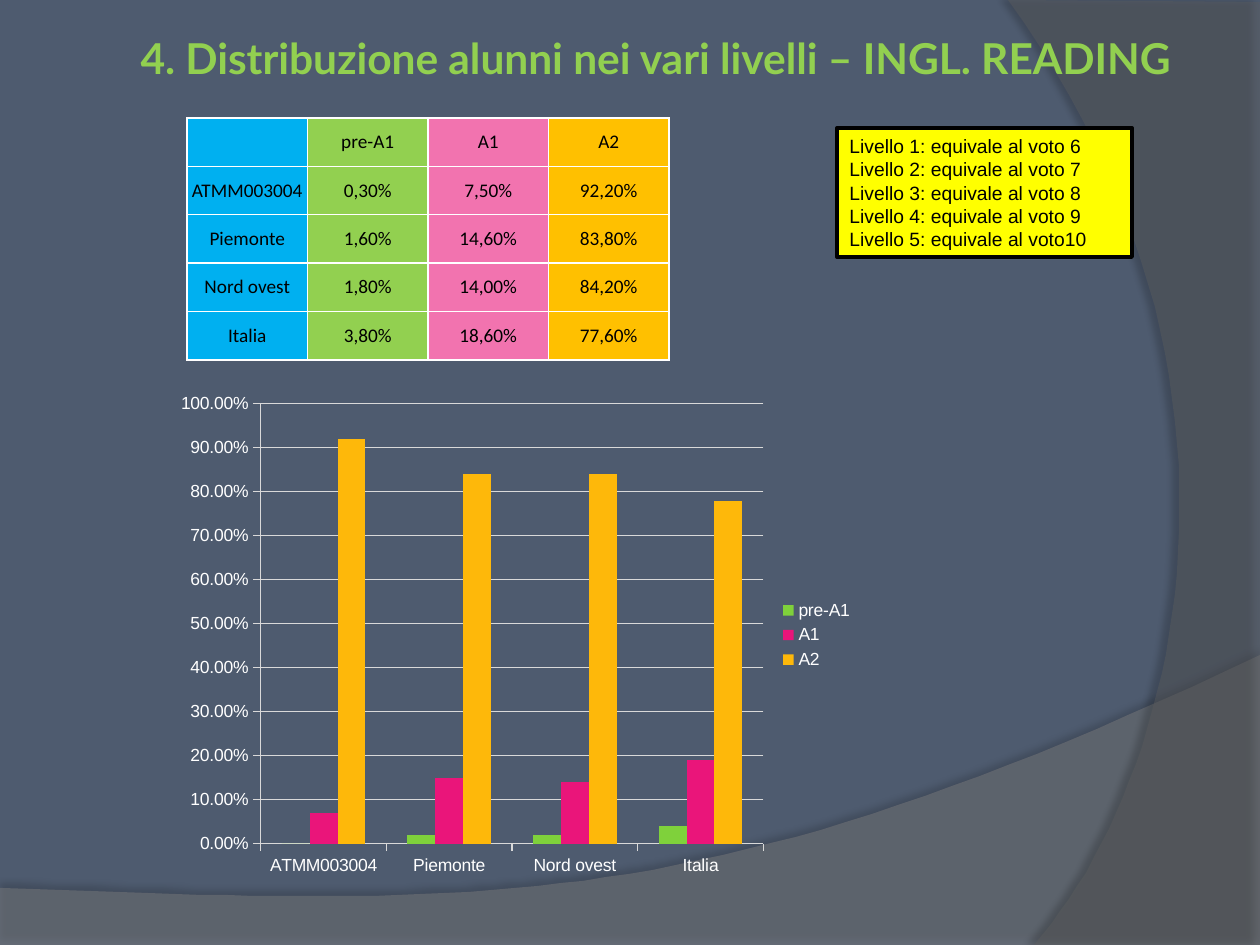
from dataclasses import dataclass

from lxml import etree
from pptx import Presentation
from pptx.chart.data import CategoryChartData
from pptx.dml.color import RGBColor
from pptx.enum.chart import XL_CHART_TYPE, XL_LEGEND_POSITION, XL_TICK_MARK
from pptx.enum.shapes import MSO_SHAPE
from pptx.enum.text import MSO_ANCHOR, MSO_AUTO_SIZE, PP_ALIGN
from pptx.oxml.ns import qn
from pptx.util import Pt

COLUMNS = XL_CHART_TYPE.COLUMN_CLUSTERED
LEGEND_RIGHT = XL_LEGEND_POSITION.RIGHT
TICK_OUTSIDE = XL_TICK_MARK.OUTSIDE
RECTANGLE = MSO_SHAPE.RECTANGLE
MIDDLE = MSO_ANCHOR.MIDDLE
FIXED_SIZE = MSO_AUTO_SIZE.NONE
CENTER, LEFT = PP_ALIGN.CENTER, PP_ALIGN.LEFT
PX_PER_INCH = 126


@dataclass(frozen=True)
class Theme:
    background: str = "4E5B6F"
    wave: str = "7F7F7F"
    arc: str = "5E5E5E"
    title: str = "92D050"
    dark: str = "000000"
    light: str = "FFFFFF"
    axis: str = "D9D9D9"
    note: str = "FFFF00"
    table_columns: tuple = ("00B0F0", "92D050", "F273AF", "FFC000")
    series: tuple = ("7FD13B", "EA157A", "FEB80A")
    title_font: str = "Lato"
    table_font: str = "Calibri"
    body_font: str = "Arial"
    title_size: float = 24.3
    text_size: float = 11
    chart_size: float = 10


THEME = Theme()
TITLE = "4. Distribuzione alunni nei vari livelli – INGL. READING"
LEVELS = ("pre-A1", "A1", "A2")
RESULTS = {
    "ATMM003004": (0.3, 7.5, 92.2),
    "Piemonte": (1.6, 14.6, 83.8),
    "Nord ovest": (1.8, 14, 84.2),
    "Italia": (3.8, 18.6, 77.6),
}
GRADE_NOTES = (
    "Livello 1: equivale al voto 6",
    "Livello 2: equivale al voto 7",
    "Livello 3: equivale al voto 8\v"
    "Livello 4: equivale al voto 9\v"
    "Livello 5: equivale al voto10",
)


def px(length):
    return round(length * 914400 / PX_PER_INCH)


def box(*lengths):
    return [px(length) for length in lengths]


def rgb(color):
    return RGBColor.from_string(color)


def paint(fill, color):
    fill.solid()
    fill.fore_color.rgb = rgb(color)


def set_font(font, name, size, color, bold=False):
    font.name, font.size, font.bold = name, Pt(size), bold
    font.color.rgb = rgb(color)


def curve(start, first_pull, second_pull, end, steps=48):
    for step in range(steps + 1):
        t = step / steps
        weights = ((1 - t) ** 3, 3 * t * (1 - t) ** 2, 3 * t * t * (1 - t), t ** 3)
        yield tuple(
            sum(weight * value for weight, value in zip(weights, values))
            for values in zip(start, first_pull, second_pull, end)
        )


def add_swoosh(slide, outline, color, opacity, shadow_opacity, distance, angle):
    start, *others = outline
    builder = slide.shapes.build_freeform(*start, scale=px(1))
    builder.add_line_segments(others, close=True)
    swoosh = builder.convert_to_shape()
    paint(swoosh.fill, color)
    swoosh.line.fill.background()
    properties = swoosh._element.spPr
    fill_color = properties.find(qn("a:solidFill"))[0]
    etree.SubElement(fill_color, qn("a:alpha"), val=str(opacity * 1000))
    effects = etree.SubElement(properties, qn("a:effectLst"))
    shadow = etree.SubElement(
        effects, qn("a:outerShdw"), blurRad=str(Pt(4)), dist=str(Pt(distance)),
        dir=str(angle * 60000), algn="ctr", rotWithShape="0")
    shadow_color = etree.SubElement(shadow, qn("a:srgbClr"), val=THEME.dark)
    etree.SubElement(shadow_color, qn("a:alpha"), val=str(shadow_opacity * 1000))


def add_background(slide):
    paint(slide.background.fill, THEME.background)
    wave = [(0, 946), (1260, 946), *curve((1260, 655), (704, 919), (493, 906), (0, 888))]
    add_swoosh(slide, wave, THEME.wave, 45, 35, 3.5, 270)
    arc = [(1260, 2), (1260, 945), *curve((1034, 945), (1178, 780), (1283, 378), (1008, 0))]
    add_swoosh(slide, arc, THEME.arc, 40, 45, 4, 180)


def place_title(slide):
    title = slide.shapes.title
    slide.shapes._spTree.append(title._element)
    title.left, title.top, title.width, title.height = box(63, 0, 1186, 99)
    frame = title.text_frame
    frame.text = TITLE
    frame.auto_size, frame.vertical_anchor = FIXED_SIZE, MIDDLE
    frame.margin_top, frame.margin_bottom = px(16), 0
    heading = frame.paragraphs[0]
    heading.alignment = CENTER
    set_font(heading.font, THEME.title_font, THEME.title_size, THEME.title, True)


def add_grade_note(slide):
    note = slide.shapes.add_shape(RECTANGLE, *box(837, 128, 295, 129))
    note.shadow.inherit = False
    paint(note.fill, THEME.note)
    note.line.color.rgb, note.line.width = rgb(THEME.dark), Pt(2.25)
    frame = note.text_frame
    frame.word_wrap, frame.vertical_anchor = True, MIDDLE
    frame.text = "\n".join(GRADE_NOTES)
    for grade in frame.paragraphs:
        grade.alignment = LEFT
        set_font(grade.font, THEME.body_font, THEME.text_size, THEME.dark)


def format_cell(cell, text, color):
    cell.text = text
    cell.vertical_anchor = MIDDLE
    cell.margin_left = cell.margin_right = cell.margin_top = cell.margin_bottom = 0
    label = cell.text_frame.paragraphs[0]
    label.alignment = CENTER
    set_font(label.font, THEME.table_font, THEME.text_size, THEME.dark)
    properties = cell._tc.get_or_add_tcPr()
    for side in ("lnL", "lnR", "lnT", "lnB"):
        border = etree.SubElement(properties, qn(f"a:{side}"), w=str(Pt(1)))
        border_fill = etree.SubElement(border, qn("a:solidFill"))
        etree.SubElement(border_fill, qn("a:srgbClr"), val=THEME.light)
    paint(cell.fill, color)


def percent(value):
    return f"{value:.2f}%".replace(".", ",")


def add_results_table(slide):
    rows = [("", *LEVELS)]
    rows += [(area, *map(percent, shares)) for area, shares in RESULTS.items()]
    table = slide.shapes.add_table(
        len(rows), len(rows[0]), *box(187, 118, 482, 242)).table
    for row_index, row in enumerate(rows):
        for column_index, (text, color) in enumerate(zip(row, THEME.table_columns)):
            format_cell(table.cell(row_index, column_index), text, color)


def add_results_chart(slide):
    data = CategoryChartData(number_format="0.00%")
    data.categories = list(RESULTS)
    for level, shares in zip(LEVELS, zip(*RESULTS.values())):
        data.add_series(level, [round(share / 100, 2) for share in shares])
    chart = slide.shapes.add_chart(COLUMNS, *box(167, 384, 699, 502), data).chart
    set_font(chart.font, THEME.body_font, THEME.chart_size, THEME.light)
    chart.has_title = False
    chart.has_legend = True
    chart.legend.position, chart.legend.include_in_layout = LEGEND_RIGHT, False
    plot = chart.plots[0]
    plot.gap_width, plot.overlap, plot.vary_by_categories = 150, 0, False
    for series, color in zip(plot.series, THEME.series):
        paint(series.format.fill, color)
    shares_axis = chart.value_axis
    shares_axis.minimum_scale, shares_axis.maximum_scale = 0, 1
    shares_axis.major_unit = 0.1
    shares_axis.tick_labels.number_format = "0.00%"
    shares_axis.tick_labels.number_format_is_linked = False
    shares_axis.has_major_gridlines = True
    for part in (shares_axis, chart.category_axis, shares_axis.major_gridlines):
        part.format.line.color.rgb = rgb(THEME.axis)
    for axis in (shares_axis, chart.category_axis):
        axis.major_tick_mark = TICK_OUTSIDE


def main():
    presentation = Presentation()
    presentation.slide_width, presentation.slide_height = box(1260, 945)
    slide = presentation.slides.add_slide(presentation.slide_layouts[5])
    add_background(slide)
    place_title(slide)
    add_grade_note(slide)
    add_results_table(slide)
    add_results_chart(slide)
    presentation.save("out.pptx")


if __name__ == "__main__":
    main()
